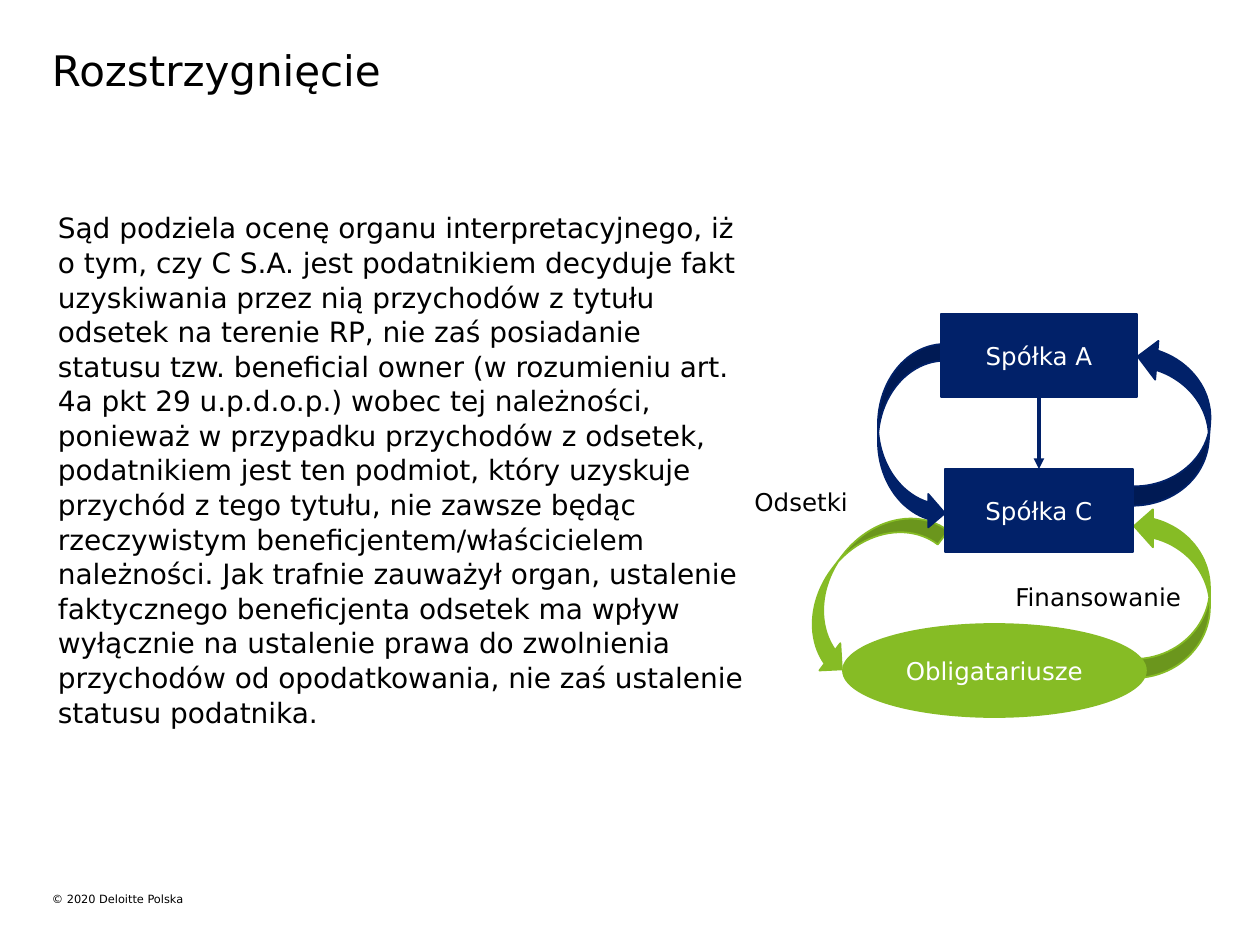
"""Build a slide on a court ruling with a diagram of financing and interest flows."""
from lxml import etree
from pptx import Presentation
from pptx.dml.color import RGBColor
from pptx.enum.shapes import MSO_CONNECTOR, MSO_SHAPE
from pptx.enum.text import MSO_ANCHOR, PP_ALIGN
from pptx.oxml.ns import qn
from pptx.util import Emu, Pt

FONT = "DejaVu Sans"
NAVY, GREEN, BLACK, WHITE = "012169", "86BC25", "000000", "FFFFFF"

TITLE = ("Rozstrzygnięcie", (52, 44, 1158, 47), 24)
RULING = (
    "Sąd podziela ocenę organu interpretacyjnego, iż o tym, czy C S.A. jest podatnikiem "
    "decyduje fakt uzyskiwania przez nią przychodów z tytułu odsetek na terenie RP, nie zaś "
    "posiadanie statusu tzw. beneficial owner (w rozumieniu art. 4a pkt 29 u.p.d.o.p.) wobec "
    "tej należności, ponieważ w przypadku przychodów z odsetek, podatnikiem jest ten podmiot, "
    "który uzyskuje przychód z tego tytułu, nie zawsze będąc rzeczywistym "
    "beneficjentem/właścicielem należności. Jak trafnie zauważył organ, ustalenie faktycznego "
    "beneficjenta odsetek ma wpływ wyłącznie na ustalenie prawa do zwolnienia przychodów od "
    "opodatkowania, nie zaś ustalenie statusu podatnika.",
    (58, 210, 692, 520), 16)
COPYRIGHT = ("© 2020\u00a0Deloitte Polska", (52, 892, 553, 28), 6.5)
FLOWS = [
    ((828, 490, 69, 192), 37.5, GREEN),
    ((878, 344, 67, 186), 0, NAVY),
    ((1132, 340, 78, 169), 184.8, NAVY),
    ((1134, 507, 76, 171), 180, GREEN),
]
PARTIES = [
    ("Spółka A", MSO_SHAPE.RECTANGLE, (941, 314, 196, 83), NAVY),
    ("Spółka C", MSO_SHAPE.RECTANGLE, (945, 469, 188, 83), NAVY),
    ("Obligatariusze", MSO_SHAPE.OVAL, (843, 624, 303, 93), GREEN),
]
OWNERSHIP = (1039, 397, 1039, 469)
FLOW_LABELS = [
    ("Odsetki", (742, 481, 129, 43)),
    ("Finansowanie", (1003, 576, 204, 72)),
]


def px(lengths):
    return [Emu(round(length * 914400 / 126)) for length in lengths]


def color(value):
    return RGBColor.from_string(value)


def write(frame, text, size, ink=BLACK, align=PP_ALIGN.LEFT, anchor=MSO_ANCHOR.TOP, inset=True):
    frame.text = text
    frame.word_wrap = True
    frame.vertical_anchor = anchor
    if not inset:
        frame.margin_left = frame.margin_top = frame.margin_right = frame.margin_bottom = 0
    paragraph = frame.paragraphs[0]
    paragraph.alignment = align
    paragraph.font.name, paragraph.font.size = FONT, Pt(size)
    paragraph.font.color.rgb = color(ink)
    return paragraph


def add_text(slide, text, box, size, inset=True):
    return write(slide.shapes.add_textbox(*px(box)).text_frame, text, size, inset=inset)


def add_solid(slide, kind, box, fill):
    solid = slide.shapes.add_shape(kind, *px(box))
    solid.shadow.inherit = False
    solid.fill.solid()
    solid.fill.fore_color.rgb = solid.line.color.rgb = color(fill)
    solid.line.width = Pt(1)
    return solid


def add_arrow(slide, ends, ink):
    arrow = slide.shapes.add_connector(MSO_CONNECTOR.STRAIGHT, *px(ends))
    arrow.line.color.rgb = color(ink)
    arrow.line.width = Pt(2)
    etree.SubElement(arrow.line._get_or_add_ln(), qn("a:tailEnd"), type="triangle")
    etree.SubElement(arrow._element.spPr, qn("a:effectLst"))


def main():
    deck = Presentation()
    deck.slide_width, deck.slide_height = px((1260, 945))
    slide = deck.slides.add_slide(deck.slide_layouts[5])

    heading, heading_box, heading_size = TITLE
    title = slide.shapes.title
    title.left, title.top, title.width, title.height = px(heading_box)
    write(title.text_frame, heading, heading_size, inset=False)

    add_text(slide, *COPYRIGHT, inset=False)
    add_text(slide, *RULING, inset=False).line_spacing = 1.03

    for box, rotation, fill in FLOWS:
        flow = add_solid(slide, MSO_SHAPE.CURVED_LEFT_ARROW, box, fill)
        flow.rotation = rotation
        flow._element.spPr.get_or_add_xfrm().set("flipH", "1")
    for name, kind, box, fill in PARTIES:
        party = add_solid(slide, kind, box, fill)
        write(party.text_frame, name, 14, WHITE, PP_ALIGN.CENTER, MSO_ANCHOR.MIDDLE)
    add_arrow(slide, OWNERSHIP, NAVY)
    for label, box in FLOW_LABELS:
        add_text(slide, label, box, 14)

    deck.save("out.pptx")


if __name__ == "__main__":
    main()
